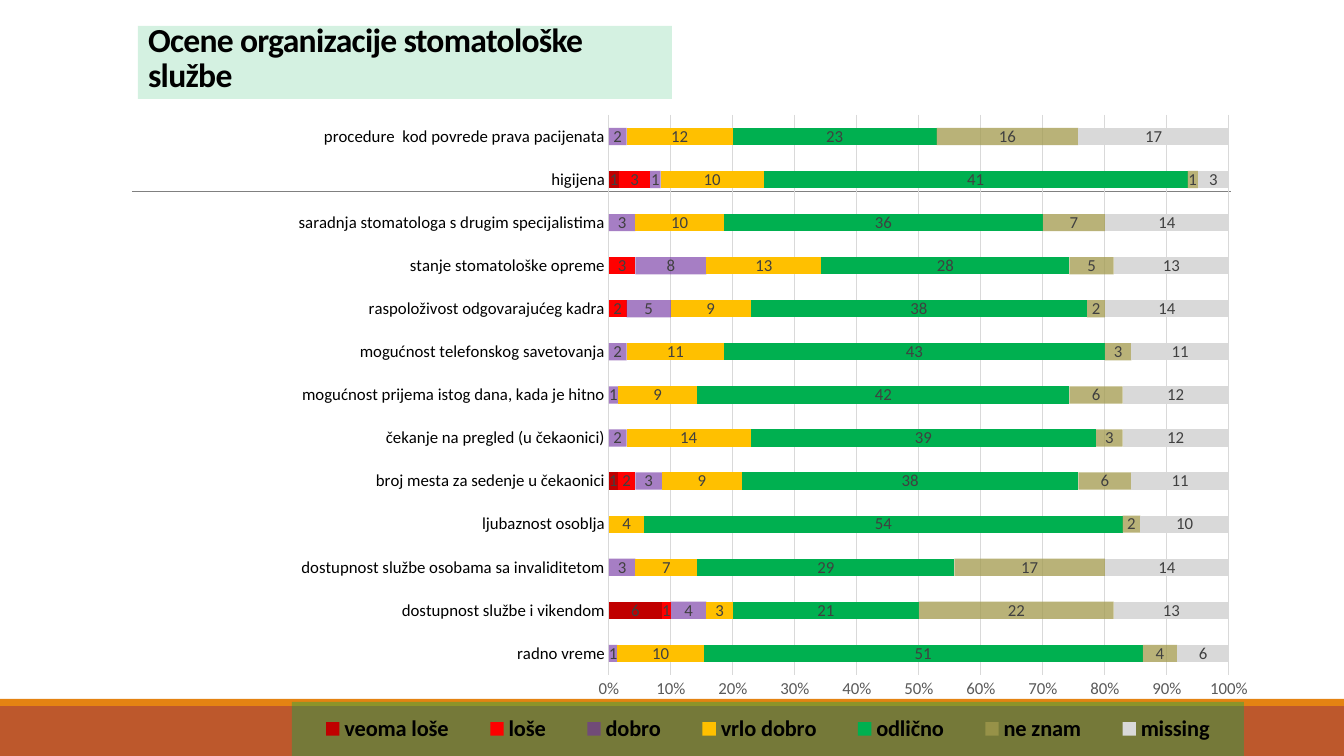
from lxml.etree import SubElement
from pptx import Presentation
from pptx.chart.data import CategoryChartData
from pptx.dml.color import RGBColor
from pptx.enum.chart import XL_CHART_TYPE, XL_LABEL_POSITION, XL_LEGEND_POSITION, XL_TICK_MARK
from pptx.enum.shapes import MSO_CONNECTOR, MSO_SHAPE
from pptx.enum.text import MSO_ANCHOR, MSO_AUTO_SIZE, PP_ALIGN
from pptx.oxml import parse_xml
from pptx.oxml.ns import nsdecls, qn
from pptx.util import Emu, Pt

TITLE = "Ocene organizacije stomatološke službe"
FONT = "Calibri"
COLORS = {
    "black": "000000", "label": "404040", "axis": "595959", "grid": "D9D9D9",
    "rule": "808080", "footer": "BD582C", "stripe": "E48312", "green": "00B050",
    "dark red": "C00000", "red": "FF0000", "purple": "7030A0",
    "amber": "FFC000", "olive": "A39B4E", "gray": "D9D9D9",
}
CATEGORIES = [
    "radno vreme",
    "dostupnost službe i vikendom",
    "dostupnost službe osobama sa invaliditetom",
    "ljubaznost osoblja",
    "broj mesta za sedenje u čekaonici",
    "čekanje na pregled (u čekaonici)",
    "mogućnost prijema istog dana, kada je hitno",
    "mogućnost telefonskog savetovanja",
    "raspoloživost odgovarajućeg kadra",
    "stanje stomatološke opreme",
    "saradnja stomatologa s drugim specijalistima",
    "higijena",
    "procedure  kod povrede prava pacijenata",
]
RATINGS = [
    ("veoma loše", "dark red", 100,
     [None, 6, None, None, 1, None, None, None, None, None, None, 1, None]),
    ("loše", "red", 100, [None, 1, None, None, 2, None, None, None, 2, 3, None, 3, None]),
    ("dobro", "purple", 62, [1, 4, 3, None, 3, 2, 1, 2, 5, 8, 3, 1, 2]),
    ("vrlo dobro", "amber", 100, [10, 3, 7, 4, 9, 14, 9, 11, 9, 13, 10, 10, 12]),
    ("odlično", "green", 100, [51, 21, 29, 54, 38, 39, 42, 43, 38, 28, 36, 41, 23]),
    ("ne znam", "olive", 76, [4, 22, 17, 2, 6, 3, 6, 3, 2, 5, 7, 1, 16]),
    ("missing", "gray", 100, [6, 13, 14, 10, 11, 12, 12, 11, 14, 13, 14, 3, 17]),
]
SLIDE_SIZE = (1344, 756)
BANDS = [("footer", (0, 706, 1344, 50)), ("stripe", (0, 699, 1344, 7))]
RULE = (132, 191, 1231, 191)
TITLE_BOX = (138, 26, 534, 73)
CHART_BOX = (279, 103, 990, 653)
PLOT_BOX = (609, 115, 620, 560)
LEGEND_BOX = (292, 702, 952, 54)


def px(value):
    return Emu(round(value * 914400 / 100.8))


def box(values):
    return [px(value) for value in values]


def color(name):
    return RGBColor.from_string(COLORS[name])


def paint(fill, name):
    fill.solid()
    fill.fore_color.rgb = color(name)


def set_alpha(element, percent):
    if percent < 100:
        alpha = SubElement(next(element.iter(qn("a:srgbClr"))), qn("a:alpha"))
        alpha.set("val", str(percent * 1000))


def style(font, size, name, bold=False):
    font.name = FONT
    font.size = Pt(size)
    font.bold = bold
    font.color.rgb = color(name)


def manual_layout(area, inner=False):
    left, top, width, height = CHART_BOX
    fractions = {
        "x": (area[0] - left) / width, "y": (area[1] - top) / height,
        "w": area[2] / width, "h": area[3] / height,
    }
    target = '<c:layoutTarget val="inner"/>' if inner else ""
    modes = '<c:xMode val="edge"/><c:yMode val="edge"/>'
    sizes = "".join(f'<c:{key} val="{value:.4f}"/>' for key, value in fractions.items())
    return parse_xml(f'<c:layout {nsdecls("c")}><c:manualLayout>{target}{modes}{sizes}'
                     '</c:manualLayout></c:layout>')


def drop_layout(element):
    for layout in element.findall(qn("c:layout")):
        element.remove(layout)


def add_background(slide):
    for name, area in BANDS:
        band = slide.shapes.add_shape(MSO_SHAPE.RECTANGLE, *box(area))
        band.shadow.inherit = False
        paint(band.fill, name)
        band.line.fill.background()
    rule = slide.shapes.add_connector(MSO_CONNECTOR.STRAIGHT, *box(RULE))
    rule.line.color.rgb = color("rule")
    rule.line.width = Pt(0.5)
    SubElement(rule._element.spPr, qn("a:effectLst"))


def format_title(title):
    title.left, title.top, title.width, title.height = box(TITLE_BOX)
    paint(title.fill, "green")
    set_alpha(title._element.spPr, 17)
    frame = title.text_frame
    frame.text = TITLE
    frame.word_wrap = True
    frame.auto_size = MSO_AUTO_SIZE.NONE
    frame.vertical_anchor = MSO_ANCHOR.BOTTOM
    paragraph = frame.paragraphs[0]
    paragraph.alignment = PP_ALIGN.LEFT
    paragraph.line_spacing = 0.85
    run = paragraph.runs[0]
    style(run.font, 24, "black", True)
    run.font._element.set("spc", "-50")


def format_axes(chart):
    for axis, name in ((chart.category_axis, "black"), (chart.value_axis, "axis")):
        axis.major_tick_mark = axis.minor_tick_mark = XL_TICK_MARK.NONE
        style(axis.tick_labels.font, 12, name)
    category_line = chart.category_axis.format.line
    category_line.color.rgb = color("grid")
    category_line.width = Pt(0.75)
    values = chart.value_axis
    values.minimum_scale, values.maximum_scale, values.major_unit = 0, 1, 0.1
    values.tick_labels.number_format = "0%"
    values.tick_labels.number_format_is_linked = False
    values.format.line.fill.background()
    values.has_major_gridlines = True
    values.major_gridlines.format.line.color.rgb = color("grid")
    values.major_gridlines.format.line.width = Pt(0.75)


def format_legend(chart):
    chart.has_legend = True
    legend = chart.legend
    legend.position = XL_LEGEND_POSITION.BOTTOM
    legend.include_in_layout = False
    style(legend.font, 16, "black", True)
    element = legend._element
    drop_layout(element)
    element.find(qn("c:legendPos")).addnext(manual_layout(LEGEND_BOX))
    background = parse_xml(
        f'<c:spPr {nsdecls("c", "a")}><a:solidFill><a:srgbClr val="{COLORS["green"]}"/>'
        '</a:solidFill><a:ln><a:noFill/></a:ln></c:spPr>')
    set_alpha(background, 38)
    element.find(qn("c:overlay")).addnext(background)


def add_ratings_chart(slide):
    data = CategoryChartData()
    data.categories = CATEGORIES
    for name, _, _, values in RATINGS:
        data.add_series(name, values)
    chart = slide.shapes.add_chart(
        XL_CHART_TYPE.BAR_STACKED_100, *box(CHART_BOX), data).chart
    chart.has_title = False
    style(chart.font, 10, "black")
    plot = chart.plots[0]
    plot.gap_width, plot.overlap, plot.vary_by_categories = 150, 100, False
    for series, (_, name, alpha, _) in zip(plot.series, RATINGS):
        paint(series.format.fill, name)
        set_alpha(series._element, alpha)
        labels = series.data_labels
        labels.show_value = True
        labels.position = XL_LABEL_POSITION.CENTER
        style(labels.font, 12, "label")
    format_axes(chart)
    format_legend(chart)
    plot_area = chart._chartSpace.chart.plotArea
    drop_layout(plot_area)
    plot_area.insert(0, manual_layout(PLOT_BOX, True))


def main():
    presentation = Presentation()
    presentation.slide_width, presentation.slide_height = box(SLIDE_SIZE)
    slide = presentation.slides.add_slide(presentation.slide_layouts[5])
    add_background(slide)
    format_title(slide.shapes.title)
    add_ratings_chart(slide)
    presentation.save("out.pptx")


if __name__ == "__main__":
    main()
